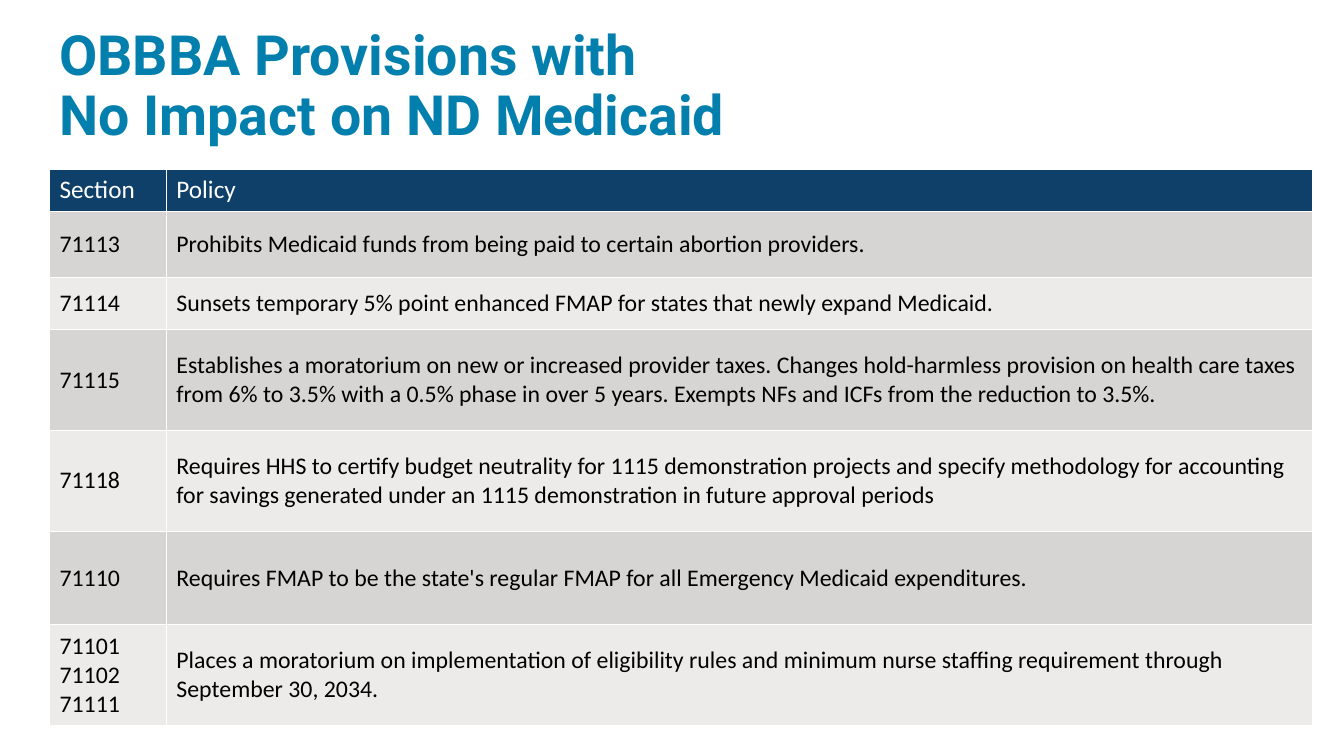
from pptx import Presentation
from pptx.dml.color import RGBColor
from pptx.enum.text import MSO_ANCHOR
from pptx.util import Inches, Pt

LEFT = 0.49
COLS = [1.16, 11.37]
HEAD = ("Section", "Policy")
HEAD_TALL = 0.42
BANDS = ("D7D5D3", "ECEBEA")
# Row height, section numbers, policy
RULES = [
    (0.65, "71113", "Prohibits Medicaid funds from being paid to certain abortion providers."),
    (0.52, "71114", "Sunsets temporary 5% point enhanced FMAP for states that newly expand Medicaid."),
    (1, "71115", "Establishes a moratorium on new or increased provider taxes. "
     "Changes hold-harmless provision on health care taxes from 6% to 3.5% "
     "with a 0.5% phase in over 5 years. "
     "Exempts NFs and ICFs from the reduction to 3.5%."),
    (1, "71118", "Requires HHS to certify budget neutrality for 1115 demonstration projects "
     "and specify methodology for accounting for savings generated under an 1115 "
     "demonstration in future approval periods"),
    (0.93, "71110", "Requires FMAP to be the state's regular FMAP "
     "for all Emergency Medicaid expenditures."),
    (1, "71101\n71102\n71111", "Places a moratorium on implementation of eligibility rules "
     "and minimum nurse staffing requirement through September 30, 2034."),
]


def color(code):
    return RGBColor.from_string(code)


def style(frame, face, size, code, bold=False):
    for para in frame.paragraphs:
        font = para.font
        font.name, font.size, font.bold = face, Pt(size), bold
        font.color.rgb = color(code)


def add_title(slide, text):
    box = slide.shapes.add_textbox(
        Inches(LEFT), Inches(0.57), Inches(12.35), Inches(0.6))
    frame = box.text_frame
    frame.word_wrap = True
    frame.vertical_anchor = MSO_ANCHOR.MIDDLE
    frame.text = text
    frame.paragraphs[0].line_spacing = 0.9
    style(frame, "Roboto", 39.6, "037FAE", bold=True)


def fill_row(table, row, texts, back, size, ink, anchor):
    for col, text in enumerate(texts):
        cell = table.cell(row, col)
        cell.text = text
        cell.vertical_anchor = anchor
        cell.fill.solid()
        cell.fill.fore_color.rgb = color(back)
        style(cell.text_frame, "Calibri", size, ink)


def add_rules(slide):
    talls = [HEAD_TALL] + [rule[0] for rule in RULES]
    table = slide.shapes.add_table(
        len(talls), len(COLS), Inches(LEFT), Inches(1.68),
        Inches(sum(COLS)), Inches(sum(talls))).table
    for column, wide in zip(table.columns, COLS):
        column.width = Inches(wide)
    for line, tall in zip(table.rows, talls):
        line.height = Inches(tall)
    fill_row(table, 0, HEAD, "0E406A", 18, "FFFFFF", MSO_ANCHOR.TOP)
    for row, (_, *texts) in enumerate(RULES, 1):
        back = BANDS[(row - 1) % 2]
        fill_row(table, row, texts, back, 17, "000000", MSO_ANCHOR.MIDDLE)


def main():
    deck = Presentation()
    deck.slide_width, deck.slide_height = Inches(13.33), Inches(7.5)
    slide = deck.slides.add_slide(deck.slide_layouts[6])
    add_title(slide, "OBBBA Provisions with \vNo Impact on ND Medicaid")
    add_rules(slide)
    deck.save("out.pptx")


if __name__ == "__main__":
    main()
